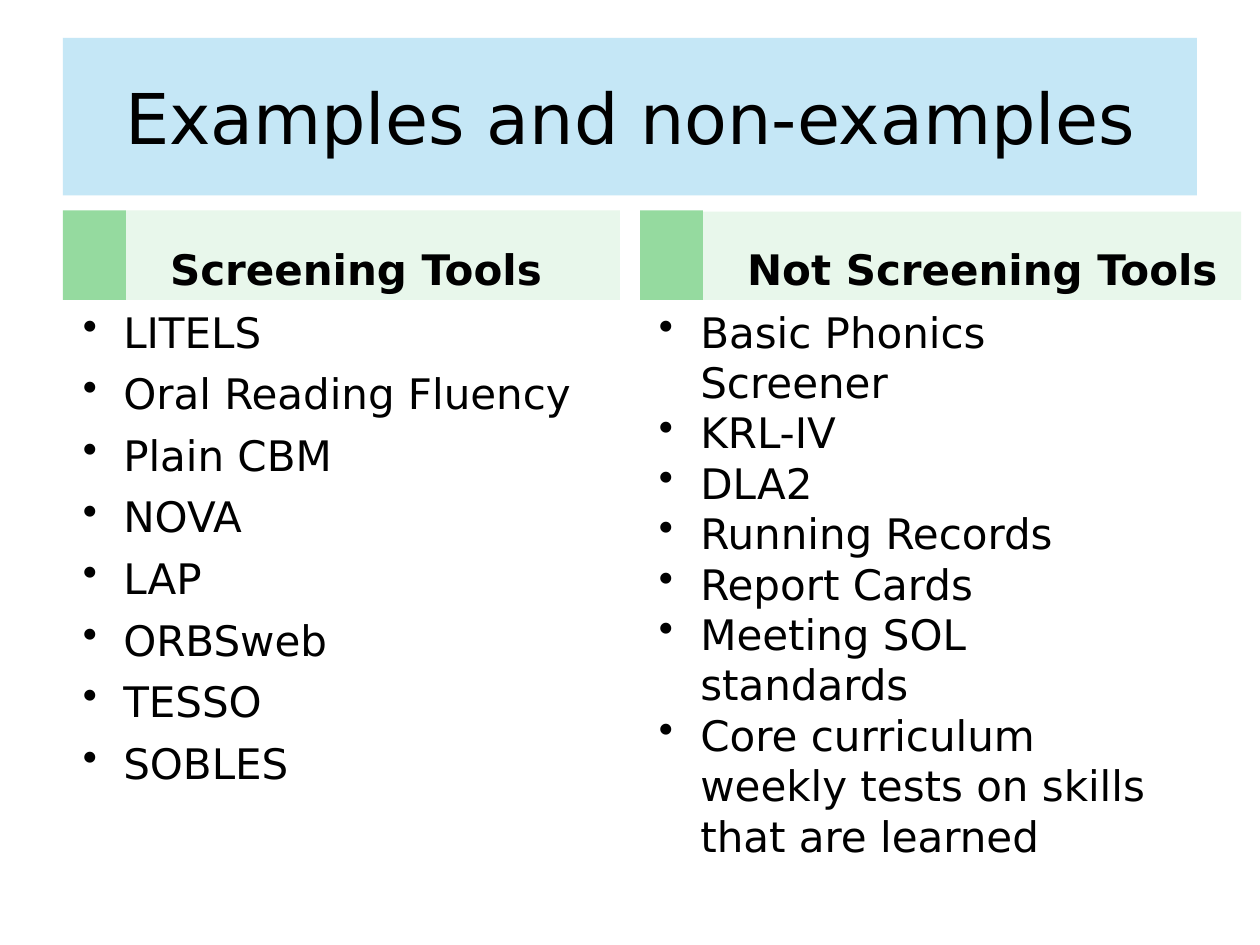
from lxml import etree
from pptx import Presentation
from pptx.dml.color import RGBColor
from pptx.enum.shapes import MSO_SHAPE
from pptx.enum.text import MSO_ANCHOR, PP_ALIGN
from pptx.oxml.ns import qn
from pptx.util import Inches, Pt

FONT = "DejaVu Sans"
COLORS = {"title": "A9DCF2", "accent": "95DA9F", "header": "E8F7EB", "text": "000000"}


def add_band(slide, left, top, width, height, color):
    band = slide.shapes.add_shape(MSO_SHAPE.RECTANGLE, Inches(left), Inches(top),
                                  Inches(width), Inches(height))
    band.shadow.inherit = False
    band.fill.solid()
    band.fill.fore_color.rgb = RGBColor.from_string(COLORS[color])
    band.line.fill.background()
    return band


def style(paragraph, size, align=PP_ALIGN.LEFT, bold=False):
    paragraph.alignment = align
    font = paragraph.font
    font.name, font.size, font.bold = FONT, Pt(size), bold
    font.color.rgb = RGBColor.from_string(COLORS["text"])


def add_bullet(paragraph, margin, hanging):
    props = paragraph._p.get_or_add_pPr()
    props.set("marL", str(Inches(margin)))
    props.set("indent", str(-Inches(hanging)))
    etree.SubElement(props, qn("a:buChar")).set("char", "•")


def add_title(slide, left, top, width, height, title):
    band = add_band(slide, left, top, width, height, "title")
    # Let the background show through the band
    tint = band.fill._xPr.find(qn("a:solidFill"))[0]
    etree.SubElement(tint, qn("a:alpha")).set("val", "67000")
    frame = band.text_frame
    frame.word_wrap = True
    frame.vertical_anchor = MSO_ANCHOR.MIDDLE
    frame.text = title
    style(frame.paragraphs[0], 40, PP_ALIGN.CENTER)


def add_header(slide, left, top, width, height, heading, drop):
    tab = 0.5
    add_band(slide, left, top, tab, height, "accent")
    band = add_band(slide, left + tab, top + drop, width - tab, height - drop, "header")
    frame = band.text_frame
    frame.word_wrap = True
    frame.margin_left = Inches(0.35)
    frame.vertical_anchor = MSO_ANCHOR.BOTTOM
    frame.text = heading
    style(frame.paragraphs[0], 24, bold=True)


def add_list(slide, left, top, width, height, items, gap, hanging):
    frame = slide.shapes.add_textbox(Inches(left), Inches(top), Inches(width),
                                     Inches(height)).text_frame
    frame.word_wrap = True
    for index, item in enumerate(items):
        entry = frame.paragraphs[0] if index == 0 else frame.add_paragraph()
        entry.text = item
        entry.space_before = Pt(gap if index else 0)
        add_bullet(entry, 0.38, hanging)
        style(entry, 24)


def add_column(slide, left, top, width, heading, items, header_width, drop, gap, hanging):
    header_height = 0.71
    add_header(slide, left, top, header_width, header_height, heading, drop)
    add_list(slide, left, top + header_height, width, 4.32, items, gap, hanging)


def main():
    deck = Presentation()
    deck.slide_width, deck.slide_height = Inches(10), Inches(7.5)
    slide = deck.slides.add_slide(deck.slide_layouts[6])

    add_title(slide, 0.5, 0.3, 9, 1.25, "Examples and non-examples")

    # Screening tools on the left, other assessments on the right
    add_column(slide, 0.5, 1.67, 4.42, "Screening Tools",
               ["LITELS", "Oral Reading Fluency", "Plain CBM", "NOVA", "LAP",
                "ORBSweb", "TESSO", "SOBLES"],
               header_width=4.42, drop=0, gap=6.4, hanging=0.32)
    add_column(slide, 5.08, 1.67, 4.42, "Not Screening Tools",
               ["Basic Phonics Screener", "KRL-IV", "DLA2", "Running Records",
                "Report Cards", "Meeting SOL standards",
                "Core curriculum weekly tests on skills that are learned"],
               header_width=4.77, drop=0.01, gap=0, hanging=0.33)

    deck.save("out.pptx")


if __name__ == "__main__":
    main()
